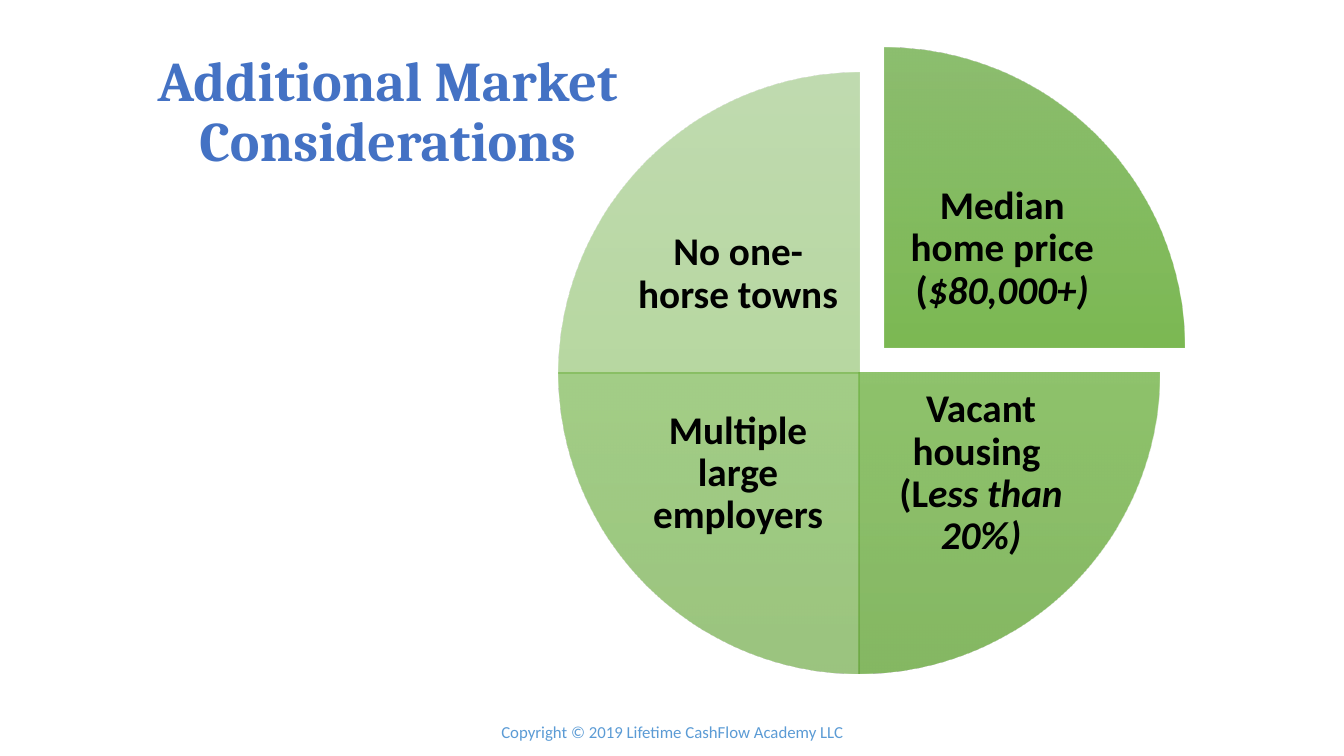
from dataclasses import dataclass

from lxml import etree
from pptx import Presentation
from pptx.dml.color import RGBColor
from pptx.enum.shapes import MSO_SHAPE
from pptx.enum.text import MSO_ANCHOR, PP_ALIGN
from pptx.oxml.ns import qn
from pptx.util import Inches, Pt

PIE = MSO_SHAPE.PIE
MIDDLE = MSO_ANCHOR.MIDDLE
CENTER = PP_ALIGN.CENTER

BLACK = RGBColor(0x00, 0x00, 0x00)
TITLE_BLUE = RGBColor(0x44, 0x72, 0xC4)
FOOTER_BLUE = RGBColor(0x5B, 0x9B, 0xD5)
# Green gradient from top to bottom, by position in percent
GREENS = {
    0: RGBColor(0x81, 0xB8, 0x61),
    50: RGBColor(0x6F, 0xB2, 0x42),
    100: RGBColor(0x62, 0xA3, 0x36),
}

WIDTH, HEIGHT = Inches(13.33), Inches(7.5)
TITLE_FONT = dict(name="Cambria", size=Pt(40), bold=True)
LABEL_FONT = dict(name="Calibri", size=Pt(28), bold=True)
FOOTER_FONT = dict(name="Calibri", size=Pt(12), bold=False)
LABEL_INSETS = dict.fromkeys(
    ("margin_left", "margin_top", "margin_right", "margin_bottom"), Inches(0.04))


@dataclass
class Box:
    """Place and size in percent of the slide's width and height."""
    left: float
    top: float
    width: float
    height: float

    def lengths(self) -> tuple[int, ...]:
        return (int(WIDTH * self.left / 100), int(HEIGHT * self.top / 100),
                int(WIDTH * self.width / 100), int(HEIGHT * self.height / 100))


@dataclass
class Quarter:
    lines: tuple[str, ...]
    italic: str
    label_left: float
    label_top: float
    opacity: int
    pie_left: float = 41.56
    pie_top: float = 9.6


# Clockwise from the top right; the first quarter is pulled out
QUARTERS = [
    Quarter(("Median home price (",), "$80,000+)", 66.32, 21.07, 90, 43.44, 6.27),
    Quarter(("Vacant housing ", "(L"), "ess than 20%)", 64.74, 50.8, 77),
    Quarter(("Multiple large employers",), "", 46.66, 50.8, 63),
    Quarter(("No one-horse towns",), "", 46.66, 24.4, 50),
]


def set_all(target, values: dict) -> None:
    for name, value in values.items():
        setattr(target, name, value)


def write_text(shape, lines: tuple[str, ...], font: dict, color: RGBColor,
               italic: str = "", spacing: float = 0.9) -> None:
    set_all(shape.text_frame, dict(word_wrap=True, vertical_anchor=MIDDLE))
    paragraph = shape.text_frame.paragraphs[0]
    set_all(paragraph, dict(alignment=CENTER, line_spacing=spacing))
    for index, line in enumerate(lines):
        if index:
            paragraph.add_line_break()
        paragraph.add_run().text = line
    if italic:
        run = paragraph.add_run()
        run.text = italic
        run.font.italic = True
    for run in paragraph.runs:
        set_all(run.font, font)
        run.font.color.rgb = color


def fill_green(shape, opacity: int) -> None:
    shape.fill.gradient()
    shape.fill.gradient_angle = 270
    stops = shape._element.spPr.find(".//" + qn("a:gsLst"))
    for stop in list(stops):
        stops.remove(stop)
    for position, color in GREENS.items():
        stop = etree.SubElement(stops, qn("a:gs"), pos=str(position * 1000))
        tint = etree.SubElement(stop, qn("a:srgbClr"), val=str(color))
        etree.SubElement(tint, qn("a:alpha"), val=str(opacity * 1000))


def draw_quarter(slide, index: int, quarter: Quarter) -> None:
    pie_box = Box(quarter.pie_left, quarter.pie_top, 44.71, 79.47)
    pie = slide.shapes.add_shape(PIE, *pie_box.lengths())
    pie.shadow.inherit = False
    pie.line.fill.background()
    fill_green(pie, quarter.opacity)
    # An adjustment of 0.6 is one degree
    start = 270 + 90 * index
    pie.adjustments[0] = start % 360 * 0.6
    pie.adjustments[1] = (start + 90) % 360 * 0.6

    label_box = Box(quarter.label_left, quarter.label_top, 16.5, 23.73)
    label = slide.shapes.add_textbox(*label_box.lengths())
    set_all(label.text_frame, LABEL_INSETS)
    write_text(label, quarter.lines, LABEL_FONT, BLACK, quarter.italic)


def main() -> None:
    presentation = Presentation()
    set_all(presentation, dict(slide_width=WIDTH, slide_height=HEIGHT))
    slide = presentation.slides.add_slide(presentation.slide_layouts[5])

    # Title
    title = slide.shapes.title
    title_box = Box(6.9, 5.33, 43.89, 19.33)
    set_all(title, dict(zip(("left", "top", "width", "height"), title_box.lengths())))
    write_text(title, ("Additional Market Considerations",), TITLE_FONT, TITLE_BLUE)

    # Quarters of the pie with their labels
    for index, quarter in enumerate(QUARTERS):
        draw_quarter(slide, index, quarter)

    # Footer
    footer = slide.shapes.add_textbox(*Box(35.18, 94.13, 29.71, 5.33).lengths())
    write_text(footer, ("Copyright © 2019 Lifetime CashFlow Academy LLC",),
               FOOTER_FONT, FOOTER_BLUE, spacing=1.0)

    presentation.save("out.pptx")


if __name__ == "__main__":
    main()
